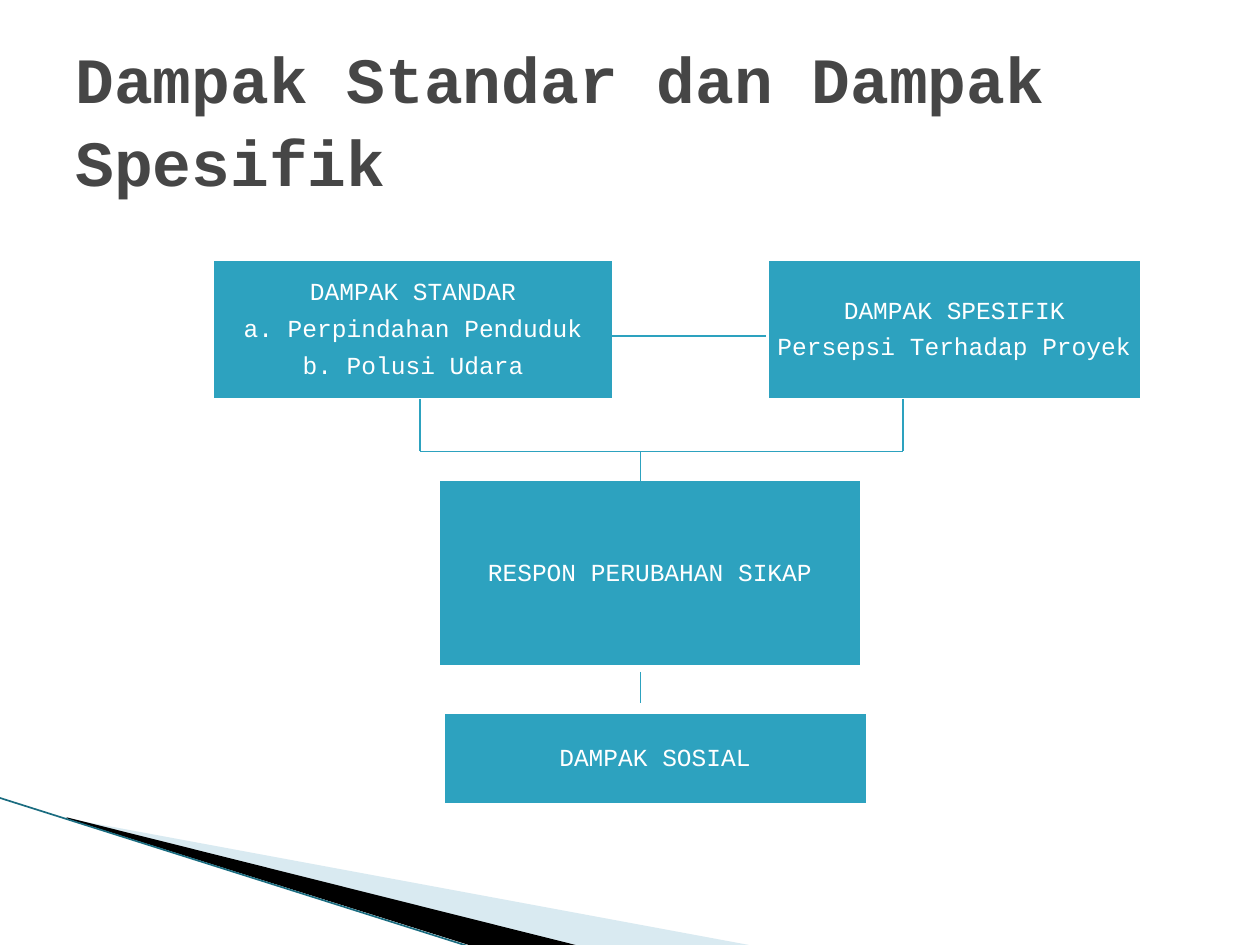
"""Build a slide showing how standard and specific impacts lead to social impact."""
import pptx
import pptx.dml.color
import pptx.enum.shapes
import pptx.enum.text
import pptx.oxml
import pptx.oxml.ns
import pptx.util
from lxml import etree

Pt = pptx.util.Pt
FONT = "Courier New"
TEAL, WHITE, GREY = "2DA2BF", "FFFFFF", "464646"

TITLE = "Dampak Standar dan Dampak Spesifik"
BOXES = [
    ((120.2, 146.9, 231.8, 82.8), ["DAMPAK STANDAR", "a. Perpindahan Penduduk", "b. Polusi Udara"]),
    ((437, 146.9, 216.7, 82.8), ["DAMPAK SPESIFIK", "Persepsi Terhadap Proyek"]),
    ((249.1, 272.9, 244.8, 109.4), ["RESPON PERUBAHAN SIKAP"]),
    ((252, 406.1, 244.8, 54.7), ["DAMPAK SOSIAL"]),
]
LEFT, MIDDLE, RIGHT, BAR = 240, 366, 516, 258
LINES = [
    (348, 192, 438, 192),
    (MIDDLE, BAR, MIDDLE, 276),
    (MIDDLE, 384, MIDDLE, 402),
    (LEFT, BAR, RIGHT, BAR),
    (RIGHT, 228, RIGHT, BAR),
    (LEFT, 228, LEFT, BAR),
]
WEDGES = [
    ([(39.6, 468.4), (428.4, 540), (328.3, 540), (39.6, 468)], "A0CBDC", 40),
    ([(38.2, 467.3), (329, 540), (267.8, 540), (38.9, 468)], "000000", 100),
]
EDGE = (0, 456, 267, 540.5)


def color(value):
    return pptx.dml.color.RGBColor.from_string(value)


def add_line(slide, ends, line_color, width):
    straight = pptx.enum.shapes.MSO_CONNECTOR.STRAIGHT
    connector = slide.shapes.add_connector(straight, *map(Pt, ends))
    connector.line.color.rgb = color(line_color)
    connector.line.width = Pt(width)
    etree.SubElement(connector._element.spPr, pptx.oxml.ns.qn("a:effectLst"))


def add_wedge(slide, points, fill, opacity):
    builder = slide.shapes.build_freeform(*points[0], scale=Pt(1))
    builder.add_line_segments(points[1:], close=True)
    shape = builder.convert_to_shape()
    shape.shadow.inherit = False
    shape.line.fill.background()
    shape.fill.solid()
    shape.fill.fore_color.rgb = color(fill)
    if opacity < 100:
        fill_element = shape._element.spPr.find(".//" + pptx.oxml.ns.qn("a:srgbClr"))
        etree.SubElement(fill_element, pptx.oxml.ns.qn("a:alpha"), val=str(opacity * 1000))


def write(paragraph, text, size, text_color, bold=False):
    run = paragraph.add_run()
    run.text = text
    run.font.name = FONT
    run.font.size = Pt(size)
    run.font.bold = bold
    run.font.color.rgb = color(text_color)


def add_title(slide):
    frame = slide.shapes.add_textbox(Pt(36), Pt(21.6), Pt(648), Pt(90)).text_frame
    frame.word_wrap = True
    frame.vertical_anchor = pptx.enum.text.MSO_ANCHOR.MIDDLE
    frame.paragraphs[0].line_spacing = 1.07
    write(frame.paragraphs[0], TITLE, 36.9, GREY, bold=True)


def add_box(slide, bounds, lines):
    rectangle = pptx.enum.shapes.MSO_SHAPE.RECTANGLE
    shape = slide.shapes.add_shape(rectangle, *map(Pt, bounds))
    shape.shadow.inherit = False
    shape.fill.solid()
    shape.fill.fore_color.rgb = color(TEAL)
    shape.line.color.rgb = color(WHITE)
    shape.line.width = Pt(4.33)
    frame = shape.text_frame
    frame.word_wrap = True
    frame.vertical_anchor = pptx.enum.text.MSO_ANCHOR.MIDDLE
    frame.margin_left = frame.margin_right = Pt(4.4)
    frame.margin_top = frame.margin_bottom = Pt(4.4)
    for index, text in enumerate(lines):
        paragraph = frame.add_paragraph() if index else frame.paragraphs[0]
        paragraph.alignment = pptx.enum.text.PP_ALIGN.CENTER
        paragraph.line_spacing = 0.9
        paragraph.space_after = Pt(5.8)
        write(paragraph, text, 14, WHITE)


def main():
    presentation = pptx.Presentation()
    presentation.slide_width, presentation.slide_height = Pt(720), Pt(540)
    slide = presentation.slides.add_slide(presentation.slide_layouts[6])
    for wedge in WEDGES:
        add_wedge(slide, *wedge)
    add_line(slide, EDGE, "1A6C80", 0.95)
    add_title(slide)
    for bounds, lines in BOXES:
        add_box(slide, bounds, lines)
    for ends in LINES:
        add_line(slide, ends, TEAL, 0.75)
    presentation.save("out.pptx")


if __name__ == "__main__":
    main()
